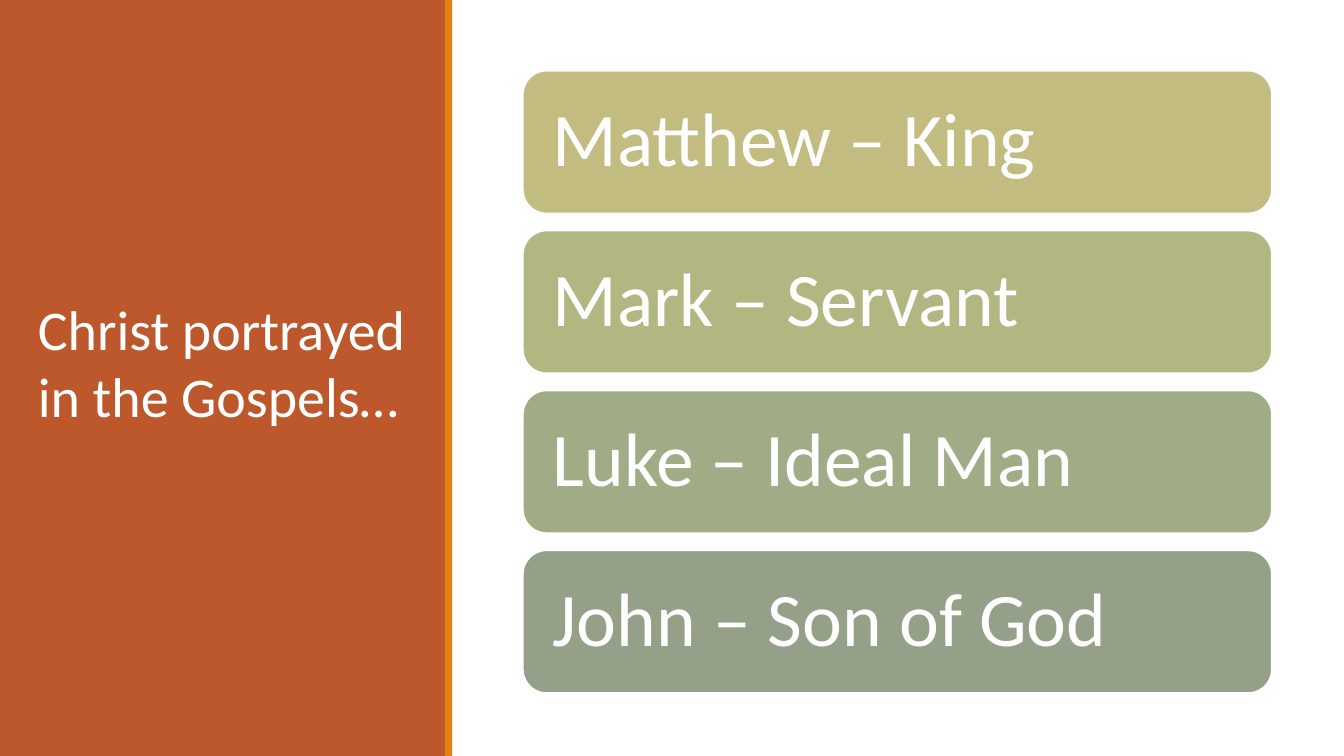
from pptx import Presentation
from pptx.dml.color import RGBColor
from pptx.enum.shapes import MSO_SHAPE
from pptx.enum.text import MSO_ANCHOR, PP_ALIGN
from pptx.util import Pt

RECT = MSO_SHAPE.RECTANGLE
ROUND = MSO_SHAPE.ROUNDED_RECTANGLE
TOP = MSO_ANCHOR.TOP
MIDDLE = MSO_ANCHOR.MIDDLE
LEFT = PP_ALIGN.LEFT

WHITE = RGBColor(0xFF, 0xFF, 0xFF)
RUST = RGBColor(0xBD, 0x58, 0x2C)
ORANGE = RGBColor(0xE4, 0x83, 0x12)
SAND = RGBColor(0xC2, 0xBC, 0x80)
OLIVE = RGBColor(0xB2, 0xB7, 0x82)
SAGE = RGBColor(0xA0, 0xAC, 0x85)
MOSS = RGBColor(0x94, 0xA0, 0x88)

GOSPELS = [
    ("Matthew – King", SAND),
    ("Mark – Servant", OLIVE),
    ("Luke – Ideal Man", SAGE),
    ("John – Son of God", MOSS),
]
CARD_TOP = 50.5
CARD_STEP = 114.2


class Painter:
    font = "Calibri"
    color = WHITE

    def __init__(self, slide):
        self.slide = slide

    def shape(self, kind, x, y, w, h, fill):
        item = self.slide.shapes.add_shape(kind, Pt(x), Pt(y), Pt(w), Pt(h))
        item.shadow.inherit = False
        item.fill.solid()
        item.fill.fore_color.rgb = fill
        item.line.fill.background()
        return item

    def label(self, frame, text, size, anchor):
        frame.word_wrap = True
        frame.vertical_anchor = anchor
        para = frame.paragraphs[0]
        para.text = text
        para.alignment = LEFT
        para.font.name = self.font
        para.font.size = Pt(size)
        para.font.color.rgb = self.color
        return para

    def card(self, x, y, w, h, fill, text):
        item = self.shape(ROUND, x, y, w, h, fill)
        item.line.color.rgb = WHITE
        item.line.width = Pt(1.25)
        frame = item.text_frame
        frame.margin_left = frame.margin_right = Pt(16.5)
        frame.margin_top = frame.margin_bottom = Pt(16.5)
        self.label(frame, text, 54, MIDDLE).line_spacing = 0.9

    def title(self, x, y, w, h, text):
        box = self.slide.shapes.add_textbox(Pt(x), Pt(y), Pt(w), Pt(h))
        self.label(box.text_frame, text, 40, TOP)


def main():
    deck = Presentation()
    deck.slide_width = Pt(960)
    deck.slide_height = Pt(540)
    pen = Painter(deck.slides.add_slide(deck.slide_layouts[6]))

    pen.shape(RECT, 0, 0, 319, 540, RUST)
    pen.shape(RECT, 318, 0, 5, 540, ORANGE)
    for row, (text, fill) in enumerate(GOSPELS):
        pen.card(373.5, CARD_TOP + row * CARD_STEP, 535, 102, fill, text)
    pen.title(20, 206.5, 277, 126, "Christ portrayed in the Gospels…")

    deck.save("out.pptx")


if __name__ == "__main__":
    main()
